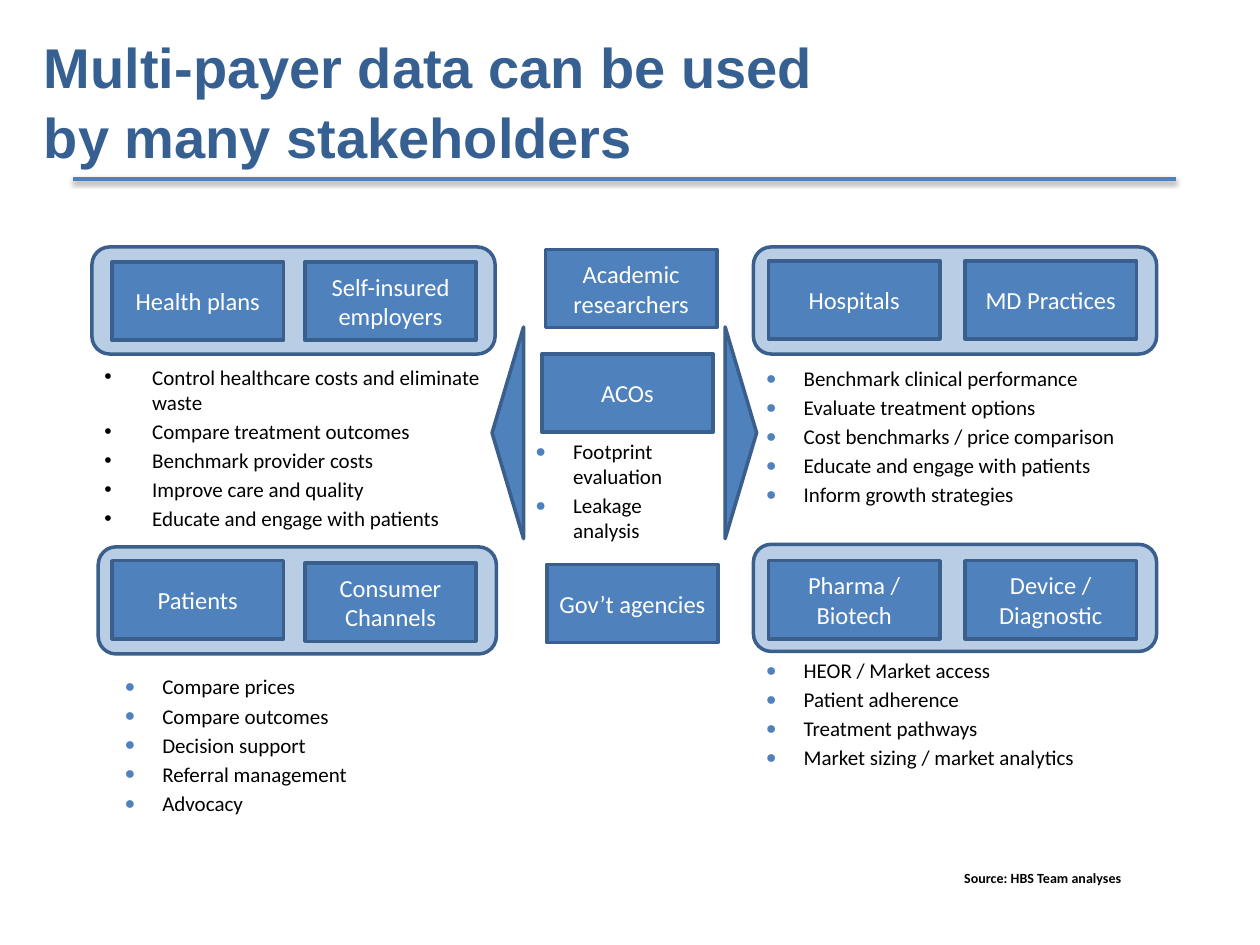
from lxml.etree import SubElement
from pptx import Presentation
from pptx.dml.color import RGBColor
from pptx.enum.shapes import MSO_CONNECTOR, MSO_SHAPE
from pptx.enum.text import MSO_ANCHOR, PP_ALIGN
from pptx.oxml import parse_xml
from pptx.oxml.ns import nsdecls, qn
from pptx.util import Inches, Pt

HUES = {"title": "376092", "blue": "4F81BD", "edge": "3A5F8C",
        "pale": "B9CDE5", "black": "000000", "white": "FFFFFF"}
FONTS = {
    "title": {"name": "Arial", "size": Pt(32), "bold": True},
    "box": {"name": "Calibri", "size": Pt(14), "bold": False},
    "list": {"name": "Calibri", "size": Pt(12), "bold": False},
    "source": {"name": "Calibri", "size": Pt(8), "bold": True},
}

deck = Presentation()
deck.slide_width, deck.slide_height = Inches(10), Inches(7.5)
slide = deck.slides.add_slide(deck.slide_layouts[6])
shapes = slide.shapes


def write(para, text, style, hue):
    para.text = text
    for run in para.runs:
        for key, value in FONTS[style].items():
            setattr(run.font, key, value)
        run.font.color.rgb = RGBColor.from_string(HUES[hue])


def draw(kind, x, y, wide, high, fill, text=""):
    shape = shapes.add_shape(kind, Inches(x), Inches(y), Inches(wide), Inches(high))
    shape.shadow.inherit = False
    shape.fill.solid()
    shape.fill.fore_color.rgb = RGBColor.from_string(HUES[fill])
    shape.line.color.rgb = RGBColor.from_string(HUES["edge"])
    shape.line.width = Pt(2)
    if text:
        frame = shape.text_frame
        frame.word_wrap = True
        frame.vertical_anchor = MSO_ANCHOR.MIDDLE
        frame.paragraphs[0].alignment = PP_ALIGN.CENTER
        write(frame.paragraphs[0], text, "box", "white")
    return shape


# Group panels
for x, y, wide in [(0.78, 4.34, 3.16), (5.98, 4.32, 3.2),
                   (5.98, 1.96, 3.2), (0.73, 1.96, 3.2)]:
    draw(MSO_SHAPE.ROUNDED_RECTANGLE, x, y, wide, 0.85, "pale")

# Stakeholder boxes
boxes = [
    ("Health plans", 0.89, 2.08), ("Self-insured employers", 2.42, 2.08),
    ("Academic researchers", 4.33, 1.98), ("ACOs", 4.3, 2.81),
    ("Hospitals", 6.1, 2.07), ("MD Practices", 7.66, 2.07),
    ("Patients", 0.89, 4.45), ("Consumer Channels", 2.42, 4.47),
    ("Gov’t agencies", 4.34, 4.48),
    ("Pharma / Biotech", 6.1, 4.45), ("Device / Diagnostic", 7.66, 4.45),
]
for text, x, y in boxes:
    draw(MSO_SHAPE.RECTANGLE, x, y, 1.36, 0.62, "blue", text)

# Side arrows
for x, turn in [(5.04, 90), (3.19, 270)]:
    draw(MSO_SHAPE.ISOSCELES_TRIANGLE, x, 3.31, 1.68, 0.25, "blue").rotation = turn

# Bullet lists: place, indent, bullet, items
lists = [
    (0.73, 2.84, 3.22, 1.82, 0.38, "•",
     ["Control healthcare costs and eliminate waste", "Compare treatment outcomes",
      "Benchmark provider costs", "Improve care and quality",
      "Educate and engage with patients"]),
    (4.15, 3.43, 1.59, 1.6, 0.3, "●", ["Footprint evaluation", "Leakage analysis"]),
    (5.98, 2.85, 3.45, 2.33, 0.3, "●",
     ["Benchmark clinical performance", "Evaluate treatment options",
      "Cost benchmarks / price comparison", "Educate and engage with patients",
      "Inform growth strategies"]),
    (5.98, 5.17, 3.45, 1.51, 0.3, "●",
     ["HEOR / Market access", "Patient adherence", "Treatment pathways",
      "Market sizing / market analytics"]),
    (0.89, 5.3, 2.2, 1.51, 0.3, "●",
     ["Compare prices", "Compare outcomes", "Decision support",
      "Referral management", "Advocacy"]),
]
for x, y, wide, high, indent, mark, items in lists:
    frame = shapes.add_textbox(Inches(x), Inches(y), Inches(wide), Inches(high)).text_frame
    frame.word_wrap = True
    for i, item in enumerate(items):
        para = frame.add_paragraph() if i else frame.paragraphs[0]
        props = para._p.get_or_add_pPr()
        props.set("marL", str(Inches(indent)))
        props.set("indent", str(-Inches(indent)))
        if mark == "●":
            color = SubElement(props, qn("a:buClr"))
            SubElement(color, qn("a:srgbClr"), val=HUES["blue"])
            SubElement(props, qn("a:buSzPct"), val="85000")
        SubElement(props, qn("a:buFont"), typeface="Arial")
        SubElement(props, qn("a:buChar"), char=mark)
        if i:
            para.space_before = Pt(2.2)
        write(para, item, "list", "black")

# Title and source
notes = [
    ("Multi-payer data can be used\vby many stakeholders", 0.25, 0.19, 9.33, 0.83,
     "title", "title", PP_ALIGN.LEFT, 1.04),
    ("Source: HBS Team analyses", 7.49, 6.85, 1.51, 0.28,
     "source", "black", PP_ALIGN.RIGHT, 1.0),
]
for text, x, y, wide, high, style, hue, align, gap in notes:
    frame = shapes.add_textbox(Inches(x), Inches(y), Inches(wide), Inches(high)).text_frame
    frame.word_wrap = True
    para = frame.paragraphs[0]
    para.alignment, para.line_spacing = align, gap
    write(para, text, style, hue)

# Rule under the title, with a soft shadow
rule = shapes.add_connector(MSO_CONNECTOR.STRAIGHT, Inches(0.58), Inches(1.42),
                            Inches(9.33), Inches(1.42))
rule.line.color.rgb = RGBColor.from_string(HUES["blue"])
rule.line.width = Pt(2)
rule._element.spPr.append(parse_xml(
    f'<a:effectLst {nsdecls("a")}>'
    f'<a:outerShdw blurRad="{Pt(3.1)}" dist="{Pt(1.6)}" dir="5400000" rotWithShape="0">'
    f'<a:srgbClr val="{HUES["black"]}"><a:alpha val="38000"/></a:srgbClr>'
    '</a:outerShdw></a:effectLst>'))

deck.save("out.pptx")
